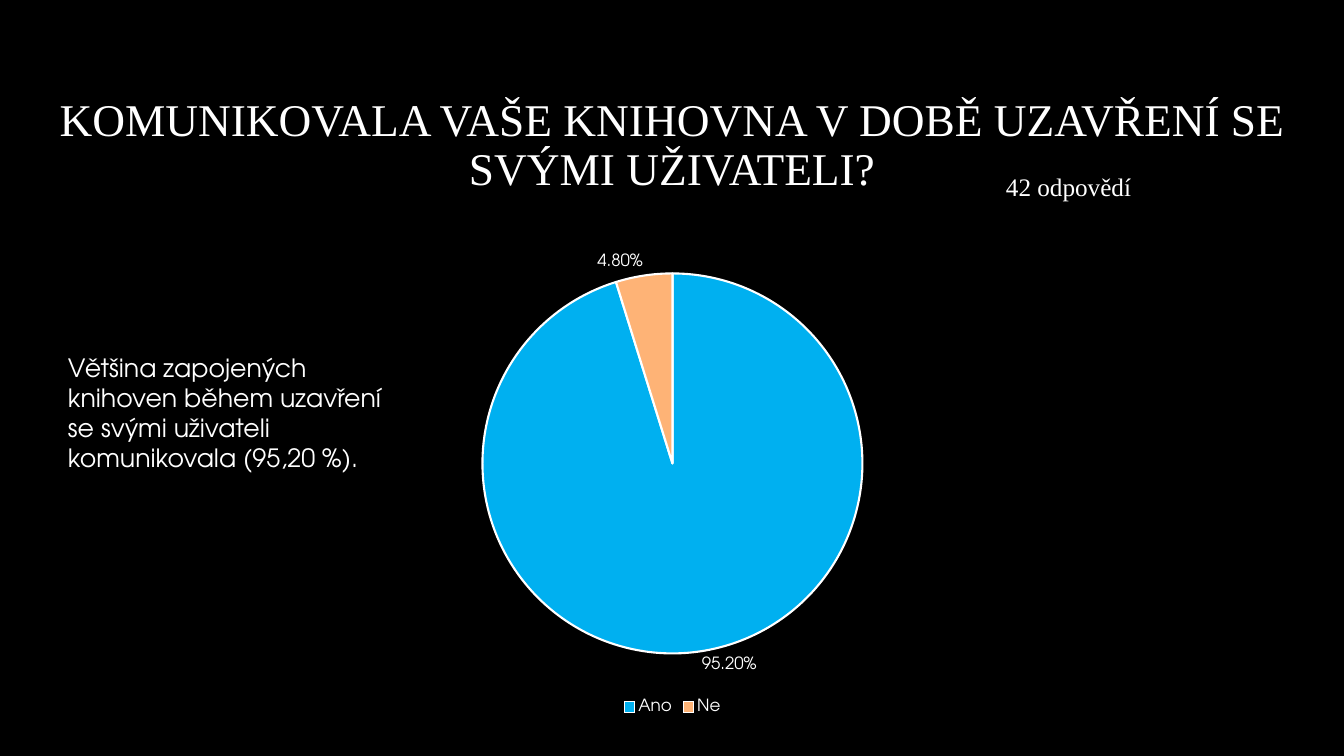
from pptx import Presentation
from pptx.chart.data import CategoryChartData
from pptx.dml.color import RGBColor
from pptx.enum.chart import XL_CHART_TYPE as ChartType, XL_LABEL_POSITION as LabelPos
from pptx.enum.chart import XL_LEGEND_POSITION as LegendPos
from pptx.enum.text import MSO_ANCHOR as Anchor, PP_ALIGN as Align
from pptx.util import Pt

PX = 914400 / 100.8
COLORS = {"background": "000000", "text": "FFFFFF", "Ano": "00B0F0", "Ne": "FEB376"}
SANS, SERIF = "TeX Gyre Adventor", "Times New Roman"


def place(*lengths):
    """Turn px lengths into EMU."""
    return [round(length * PX) for length in lengths]


def style(font, size, face):
    font.size, font.name = Pt(size), face
    font.color.rgb = RGBColor.from_string(COLORS["text"])


deck = Presentation()
deck.slide_width, deck.slide_height = place(1344, 756)
slide = deck.slides.add_slide(deck.slide_layouts[6])
backdrop = slide.background.fill
backdrop.solid()
backdrop.fore_color.rgb = RGBColor.from_string(COLORS["background"])

# Share of answers
answers = CategoryChartData(number_format="0.0")
answers.categories = ["Ano", "Ne"]
answers.add_series("Series 1", [95.2, 4.8])
pie = slide.shapes.add_chart(ChartType.PIE, *place(93, 239, 1159, 480), answers).chart
pie.has_title = False
style(pie.font, 10, SANS)
pie.has_legend = True
pie.legend.position = LegendPos.BOTTOM
pie.legend.include_in_layout = False
style(pie.legend.font, 12, SANS)

plot = pie.plots[0]
plot.vary_by_categories = True
plot.has_data_labels = True
labels = plot.data_labels
for attribute, value in {
    "show_percentage": True,
    "show_value": False,
    "number_format": "0.00%",
    "number_format_is_linked": False,
    "position": LabelPos.OUTSIDE_END,
}.items():
    setattr(labels, attribute, value)
style(labels.font, 12, SANS)

for index, answer in enumerate(["Ano", "Ne"]):
    wedge = plot.series[0].points[index].format
    wedge.fill.solid()
    wedge.fill.fore_color.rgb = RGBColor.from_string(COLORS[answer])
    wedge.line.color.rgb = RGBColor.from_string(COLORS["text"])
    wedge.line.width = Pt(1.5)

# Question, number of answers and finding
texts = [
    ("KOMUNIKOVALA VAŠE KNIHOVNA V DOBĚ UZAVŘENÍ SE SVÝMI UŽIVATELI?",
     (12, 92, 1320, 108), 32.4, SERIF,
     {"alignment": Align.CENTER, "line_spacing": 0.9}, Anchor.MIDDLE),
    ("42 odpovědí", (996, 166, 166, 40), 18, SERIF, {}, Anchor.TOP),
    ("Většina zapojených knihoven během uzavření se svými uživateli komunikovala (95,20 %).",
     (58, 347, 351, 132), 18, SANS, {}, Anchor.TOP),
]
for wording, box, size, face, layout, anchor in texts:
    frame = slide.shapes.add_textbox(*place(*box)).text_frame
    frame.word_wrap = True
    frame.vertical_anchor = anchor
    paragraph = frame.paragraphs[0]
    for attribute, value in layout.items():
        setattr(paragraph, attribute, value)
    run = paragraph.add_run()
    run.text = wording
    style(run.font, size, face)

deck.save("out.pptx")
